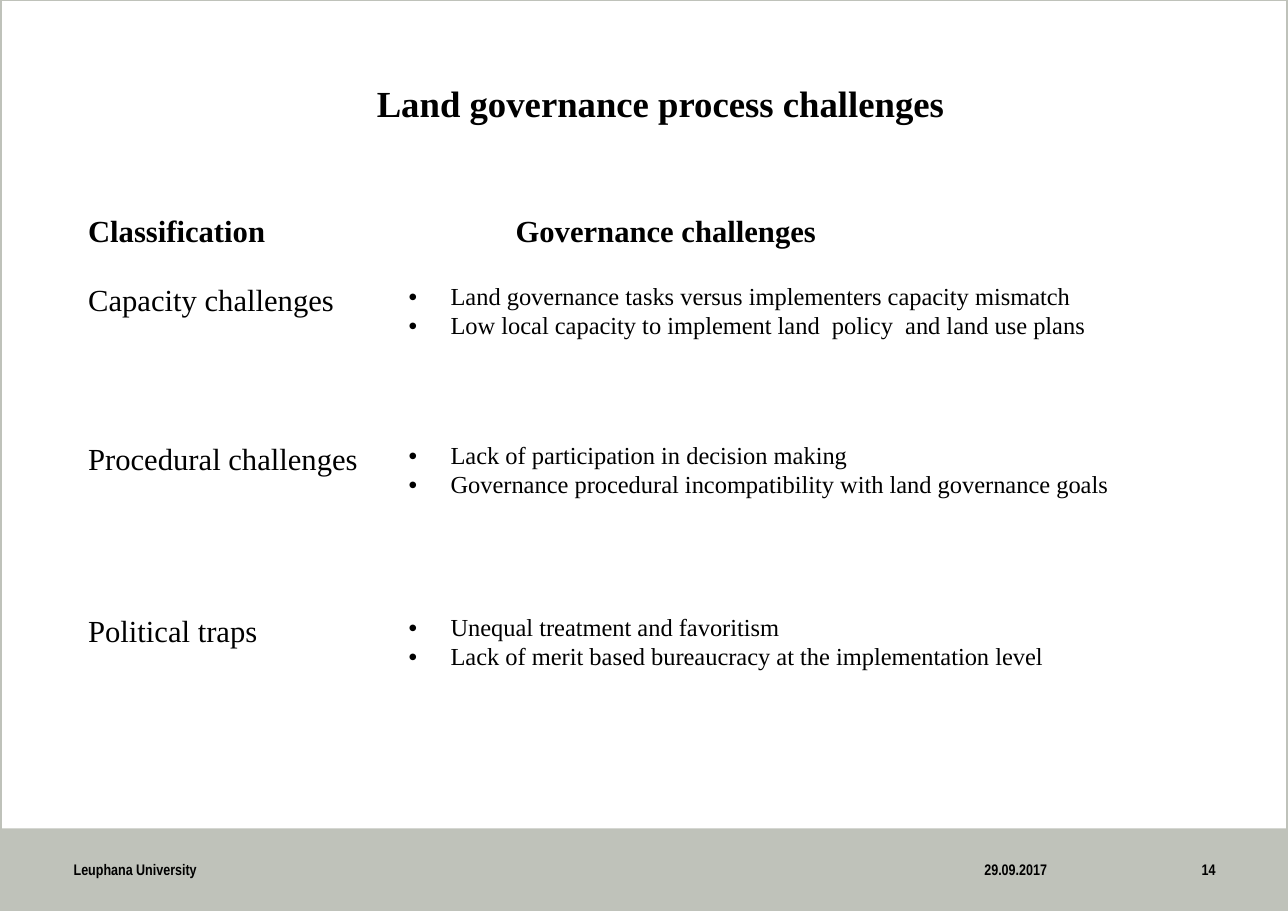
from lxml import etree
from pptx import Presentation
from pptx.dml.color import RGBColor
from pptx.enum.shapes import MSO_SHAPE
from pptx.enum.text import MSO_ANCHOR, PP_ALIGN
from pptx.oxml.ns import qn
from pptx.util import Inches, Pt

RECTANGLE = MSO_SHAPE.RECTANGLE
TOP, MIDDLE = MSO_ANCHOR.TOP, MSO_ANCHOR.MIDDLE
LEFT, CENTER, RIGHT = PP_ALIGN.LEFT, PP_ALIGN.CENTER, PP_ALIGN.RIGHT
SERIF, NARROW = "Times New Roman", "Arial Narrow"
BLACK, GREY = "000000", "BFC2BA"
WIDTH, HEIGHT = 11.69, 8.27
PLAIN_TABLE = "{2D5ABB26-0587-4C30-8999-92F81FD0307C}"

HEADINGS = ("Classification", "Governance challenges")
CHALLENGES = [
    ("Capacity challenges", [
        "Land governance tasks versus implementers capacity mismatch",
        "Low local capacity to implement land  policy  and land use plans"]),
    ("Procedural challenges", [
        "Lack of participation in decision making",
        "Governance procedural incompatibility with land governance goals"]),
    ("Political traps", [
        "Unequal treatment and favoritism",
        "Lack of merit based bureaucracy at the implementation level"]),
]


def colour(code):
    return RGBColor.from_string(code)


def add_span(para, text, size, font=SERIF, bold=False):
    span = para.add_run()
    span.text = text
    span.font.name = font
    span.font.size = Pt(size)
    span.font.bold = bold
    span.font.color.rgb = colour(BLACK)


def indent(para, left, first=0):
    properties = para._p.get_or_add_pPr()
    properties.set("marL", str(Inches(left)))
    properties.set("indent", str(Inches(first)))
    return properties


def add_bullet(para):
    properties = indent(para, 0.38, -0.38)
    etree.SubElement(properties, qn("a:buFont")).set("typeface", "Arial")
    etree.SubElement(properties, qn("a:buChar")).set("char", "•")


def add_label(page, box, text, size, font, align, anchor, margins):
    label = page.shapes.add_textbox(*map(Inches, box))
    frame = label.text_frame
    frame.word_wrap = True
    frame.vertical_anchor = anchor
    frame.margin_left = frame.margin_right = Inches(margins[0])
    frame.margin_top = frame.margin_bottom = Inches(margins[1])
    para = frame.paragraphs[0]
    para.alignment = align
    add_span(para, text, size, font, True)
    return para


def add_rectangle(page, box):
    rectangle = page.shapes.add_shape(RECTANGLE, *map(Inches, box))
    rectangle.shadow.inherit = False
    return rectangle


def add_frame(page, box):
    border = add_rectangle(page, box)
    border.fill.background()
    border.line.color.rgb = colour(GREY)
    border.line.width = Pt(2)


def add_footer_band(page, box):
    band = add_rectangle(page, box)
    band.fill.solid()
    band.fill.fore_color.rgb = colour(GREY)
    band.line.fill.background()


def add_footer_labels(page, box):
    left, top = box[0], box[1] + 0.2
    for offset, width, text, align in (
            (0.57, 5.22, "Leuphana University", LEFT),
            (8.29, 1.31, "29.09.2017", RIGHT),
            (10.26, 0.87, "14", RIGHT)):
        add_label(page, (left + offset, top, width, 0.35), text, 10,
                  NARROW, align, MIDDLE, (0.1, 0.05))


def add_title(page, box):
    para = add_label(page, box, "Land governance process challenges", 24,
                     SERIF, CENTER, TOP, (0, 0))
    para.line_spacing = 0.9


def fill_cell(cell, texts, size, bold=False, bullets=False):
    cell.fill.background()
    cell.margin_left = cell.margin_right = Inches(0.07)
    cell.margin_top = cell.margin_bottom = 0
    frame = cell.text_frame
    for index, text in enumerate(texts):
        para = frame.add_paragraph() if index else frame.paragraphs[0]
        if bullets:
            add_bullet(para)
        para.line_spacing = 1.07
        add_span(para, text, size, bold=bold)


def add_challenge_table(page, box):
    table = page.shapes.add_table(4, 2, *map(Inches, box)).table
    table.first_row = table.horz_banding = False
    table._tbl.tblPr.find(qn("a:tableStyleId")).text = PLAIN_TABLE
    for column, width in zip(table.columns, (2.91, box[2] - 2.91)):
        column.width = Inches(width)
    for row, height in zip(table.rows, (0.63, 1.44, 1.56, 2)):
        row.height = Inches(height)
    for column, heading in enumerate(HEADINGS):
        fill_cell(table.cell(0, column), [heading], 20, bold=True)
    indent(table.cell(0, 1).text_frame.paragraphs[0], 0.97)
    for row, (name, points) in enumerate(CHALLENGES, 1):
        fill_cell(table.cell(row, 0), [name], 20)
        fill_cell(table.cell(row, 1), points, 16, bullets=True)


def main():
    deck = Presentation()
    deck.slide_width, deck.slide_height = Inches(WIDTH), Inches(HEIGHT)
    page = deck.slides.add_slide(deck.slide_layouts[6])
    footer = (0, 7.52, WIDTH, HEIGHT - 7.52)
    add_footer_band(page, footer)
    add_frame(page, (0, 0, WIDTH, HEIGHT))
    add_title(page, (0.8, 0.78, 10.39, 0.67))
    add_footer_labels(page, footer)
    add_challenge_table(page, (0.73, 1.93, 10.3, 5.63))
    deck.save("out.pptx")


if __name__ == "__main__":
    main()
